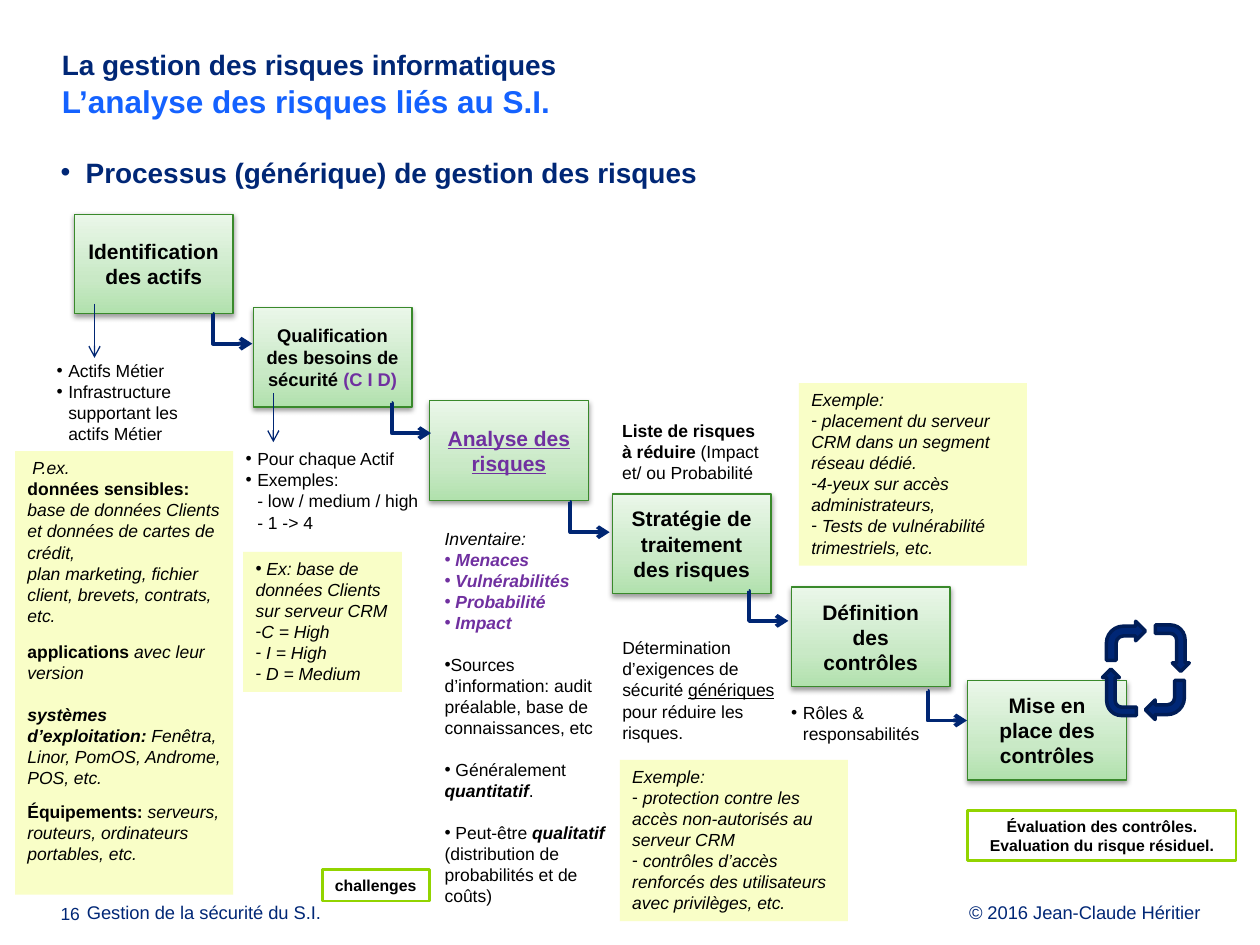
from copy import deepcopy
from dataclasses import dataclass

from lxml import etree
from pptx import Presentation
from pptx.dml.color import RGBColor
from pptx.enum.shapes import MSO_CONNECTOR, MSO_SHAPE
from pptx.enum.text import MSO_ANCHOR, MSO_AUTO_SIZE, PP_ALIGN
from pptx.oxml.ns import qn
from pptx.util import Pt

NAVY = RGBColor(0x00, 0x27, 0x76)
DARK_NAVY = RGBColor(0x00, 0x1D, 0x57)
ARROW_BLUE = RGBColor(0x00, 0x26, 0x73)
BRIGHT_BLUE = RGBColor(0x14, 0x62, 0xFF)
BLACK = RGBColor(0x00, 0x00, 0x00)
WHITE = RGBColor(0xFF, 0xFF, 0xFF)
VIOLET = RGBColor(0x70, 0x30, 0xA0)
YELLOW = RGBColor(0xF9, 0xFE, 0xC7)
LIME = RGBColor(0x92, 0xD4, 0x00)
GREEN = RGBColor(0x39, 0x89, 0x2B)
STEP_STOPS = [(0, RGBColor(0xB1, 0xE1, 0xAD)), (0.35, RGBColor(0xC9, 0xE9, 0xC6)),
              (1, RGBColor(0xEA, 0xF7, 0xE9))]

RECTANGLE, BENT_ARROW = MSO_SHAPE.RECTANGLE, MSO_SHAPE.BENT_ARROW
STRAIGHT, ELBOW = MSO_CONNECTOR.STRAIGHT, MSO_CONNECTOR.ELBOW
TOP, MIDDLE = MSO_ANCHOR.TOP, MSO_ANCHOR.MIDDLE
LEFT, CENTER, RIGHT = PP_ALIGN.LEFT, PP_ALIGN.CENTER, PP_ALIGN.RIGHT
TITLE_ONLY = 5
INSETS = (7.2, 3.6, 7.2, 3.6)
FLUSH = (0, 0, 0, 0)


@dataclass
class Item:
    """A paragraph; a span is a text or a (text, style letters) pair."""
    spans: list
    bullet: str = ""
    margin: float = 0
    hang: float = 0
    before: float = 0


def set_values(target, values):
    for name, value in values.items():
        setattr(target, name, value)


def add_xml(parent, tag, **attributes):
    return etree.SubElement(parent, qn(tag), attributes)


def format_span(span, style, size, color):
    """Style letters: b bold, i italic, u underlined, v violet."""
    set_values(span.font, {"name": "Arial", "size": Pt(size), "bold": "b" in style,
                           "italic": "i" in style, "underline": "u" in style})
    span.font.color.rgb = VIOLET if "v" in style else color


def write(box, items, style="", size=10, color=BLACK, align=LEFT, anchor=TOP,
          insets=INSETS, wrap=True, line_spacing=None):
    frame = box.text_frame
    left, top, right, bottom = map(Pt, insets)
    set_values(frame, {"margin_left": left, "margin_top": top, "margin_right": right,
                       "margin_bottom": bottom, "word_wrap": wrap,
                       "vertical_anchor": anchor, "auto_size": MSO_AUTO_SIZE.NONE})
    for index, item in enumerate(items):
        if isinstance(item, str):
            item = Item([item])
        para = frame.add_paragraph() if index else frame.paragraphs[0]
        set_values(para, {"alignment": align, "space_before": Pt(item.before),
                          "line_spacing": line_spacing})
        properties = para._p.get_or_add_pPr()
        properties.set("marL", str(Pt(item.margin)))
        properties.set("indent", str(Pt(-item.hang)))
        if item.bullet:
            add_xml(properties, "a:buFont", typeface="Arial")
            add_xml(properties, "a:buChar", char=item.bullet)
        for part in item.spans:
            text, letters = (part, style) if isinstance(part, str) else part
            span = para.add_run()
            span.text = text
            format_span(span, letters, size, color)


def add_text(page, place, items, **options):
    write(page.shapes.add_textbox(*map(Pt, place)), items, **options)


def add_box(page, place, fill=None, line=None, width=1.5, kind=RECTANGLE):
    box = page.shapes.add_shape(kind, *map(Pt, place))
    box.shadow.inherit = False
    if fill is not None:
        box.fill.solid()
        box.fill.fore_color.rgb = fill
    if line is None:
        box.line.fill.background()
    else:
        box.line.color.rgb = line
        box.line.width = Pt(width)
    return box


def add_step(page, place, spans, size):
    """Green gradient box with a soft shadow."""
    box = add_box(page, place, line=GREEN, width=0.75)
    box.fill.gradient()
    box.fill.gradient_angle = 90
    properties = box._element.spPr
    stop = properties.find(".//" + qn("a:gs"))
    stop.addnext(deepcopy(stop))
    for stop, (position, color) in zip(box.fill.gradient_stops, STEP_STOPS):
        stop.position = position
        stop.color.rgb = color
    shadow = add_xml(properties.find(qn("a:effectLst")), "a:outerShdw", blurRad=str(Pt(3.1)),
                     dist=str(Pt(1.6)), dir="5400000", rotWithShape="0")
    add_xml(add_xml(shadow, "a:srgbClr", val="000000"), "a:alpha", val="38000")
    write(box, [Item(spans)], "b", size, align=CENTER, anchor=MIDDLE)


def add_arrow(page, kind, start, end, width):
    arrow = page.shapes.add_connector(kind, *map(Pt, start + end))
    arrow.line.color.rgb = ARROW_BLUE
    arrow.line.width = Pt(width)
    properties = arrow._element.spPr
    add_xml(arrow.line._get_or_add_ln(), "a:tailEnd", type="arrow")
    add_xml(properties, "a:effectLst")
    if kind == ELBOW:
        guides = properties.find(".//" + qn("a:avLst"))
        add_xml(guides, "a:gd", name="adj1", fmla="val 400")


def add_title(page):
    title = page.shapes.title
    set_values(title, dict(zip(("left", "top", "width", "height"),
                               map(Pt, (32.4, 27.4, 663, 49.7)))))
    write(title, ["La gestion des risques informatiques"], "b", 16, NAVY,
          insets=(2.9, 0, 0, 0))
    para = title.text_frame.paragraphs[0]
    para.add_line_break()
    span = para.add_run()
    span.text = "L’analyse des risques liés au S.I."
    format_span(span, "b", 18, BRIGHT_BLUE)


def add_steps(page):
    steps = [(42.5, ["Identification des actifs"], 12),
             (144.7, ["Qualification des besoins de sécurité ", ("(C I D)", "bv")], 10.5),
             (245.5, [("Analyse des risques", "buv")], 12),
             (349.9, ["Stratégie de traitement des risques"], 12),
             (452.2, ["Définition des contrôles"], 12),
             (553, ["Mise en place des contrôles"], 12)]
    for index, (left, spans, size) in enumerate(steps):
        add_step(page, (left, 122.4 + 53.28 * index, 90.7, 56.9), spans, size)
    for index, top in enumerate((179.3, 230.4, 287, 337.7, 394.6)):
        left = 121.7 + 102.1 * index
        add_arrow(page, ELBOW, (left, top), (left + 22.5, top + 17.1), 2.25)
    for left, top, bottom in ((54, 173.5, 204.5), (156.2, 224.6, 252.7)):
        add_arrow(page, STRAIGHT, (left, top), (left, bottom), 0.75)


def dots(*texts):
    return [Item([text], "•", 6.75, 6.75) for text in texts]


def dashes(*texts):
    return [Item([text], "-") for text in texts]


def add_comments(page):
    add_text(page, (25.2, 202.3, 85, 55.4),
             dots("Actifs Métier", "Infrastructure supportant les actifs Métier"))
    add_text(page, (133.2, 252.7, 118.8, 67.7),
             dots("Pour chaque Actif", "Exemples:")
             + [Item([text], margin=6.75) for text in ("- low / medium / high", "- 1 -> 4")])
    add_text(page, (445, 397.4, 118.8, 31.7), dots("Rôles & responsabilités"))
    add_text(page, (348.5, 236.2, 96.5, 43.9),
             [Item([("Liste de risques à réduire", "b"), " (Impact et/ ou Probabilité"])])
    add_text(page, (348.5, 360.7, 102.2, 67.7),
             [Item(["Détermination d’exigences de sécurité ", ("génériques", "u"),
                    " pour réduire les risques."])])
    factors = ("Menaces", "Vulnérabilités", "Probabilité", "Impact")
    add_text(page, (247, 298.1, 108, 225.4),
             [Item([("Inventaire:", "i")])]
             + [Item([(" " + factor, "biv")], "•") for factor in factors]
             + [Item(["Sources d’information: audit préalable, base de connaissances, etc"],
                     "•", before=12),
                Item([" Généralement ", ("quantitatif", "bi"), "."], "•", before=12),
                Item([" Peut-être ", ("qualitatif", "bi"),
                      " (distribution de probabilités et de coûts)"], "•", before=12)])


def add_examples(page):
    examples = [
        ((8.64, 257.8, 124.6, 253.4),
         [" P.ex.", Item([("données sensibles:", "b")]),
          "base de données Clients et données de cartes de crédit,",
          "plan marketing, fichier client, brevets, contrats, etc.",
          Item([("applications ", "b"), "avec leur version"], before=8.5),
          Item([("systèmes d’exploitation: ", "bi"),
                "Fenêtra, Linor, PomOS, Androme, POS, etc."], before=12),
          Item([("Équipements: ", "b"), "serveurs, routeurs, ordinateurs portables, etc."],
               before=7.5)]),
        ((139, 315.4, 90.7, 79.9),
         [Item([" Ex: base de données Clients sur serveur CRM"], "•")]
         + dashes("C = High", " I = High", " D = Medium")),
        ((354.2, 434.2, 130.3, 92.2),
         ["Exemple:"] + dashes(
             " protection contre les accès non-autorisés au serveur CRM",
             " contrôles d’accès renforcés des utilisateurs avec privilèges, etc.")),
        ((456.5, 218.9, 130.3, 104.4),
         ["Exemple:"] + dashes(
             " placement du serveur CRM dans un segment réseau dédié.",
             "4-yeux sur accès administrateurs,",
             " Tests de vulnérabilité trimestriels, etc."))]
    for place, items in examples:
        write(add_box(page, place, YELLOW), items, "i")


def add_cycle(page):
    arrows = [(632.2, 355, 22.3, 22.3), (656.6, 360.7, 26.6, 19.4),
              (654.5, 388.8, 22.3, 22.3), (626.4, 385.9, 26.6, 19.4)]
    for quarter, place in enumerate(arrows):
        add_box(page, place, NAVY, DARK_NAVY, 2, BENT_ARROW).rotation = 90 * quarter


def main():
    deck = Presentation()
    deck.slide_width, deck.slide_height = Pt(720), Pt(540)
    page = deck.slides.add_slide(deck.slide_layouts[TITLE_ONLY])
    for left, width, text, size, align in (
            (504, 182.2, "© 2016 Jean-Claude Héritier", 10.5, RIGHT),
            (49.7, 182.2, "Gestion de la sécurité du S.I.", 10.5, LEFT),
            (34.6, 18.7, "16", 10, LEFT)):
        add_text(page, (left, 517, width, 11.5), [text], size=size, color=NAVY, align=align,
                 insets=FLUSH, line_spacing=Pt(10.8))
    add_title(page)
    add_text(page, (31.7, 88.6, 663, 24),
             [Item(["Processus (générique) de gestion des risques"], "•", 14.4, 14.4)],
             style="b", size=16, color=NAVY, insets=(2.9, 0, 0, 0))
    add_steps(page)
    add_comments(page)
    add_examples(page)
    add_cycle(page)
    write(add_box(page, (184.3, 496.8, 61.2, 18), WHITE, LIME), ["challenges"], "b", 9,
          wrap=False)
    write(add_box(page, (553, 463, 153.4, 28.8), WHITE, LIME),
          ["Évaluation des contrôles.", "Evaluation du risque résiduel."], "b", 9,
          align=CENTER)
    deck.save("out.pptx")


if __name__ == "__main__":
    main()
